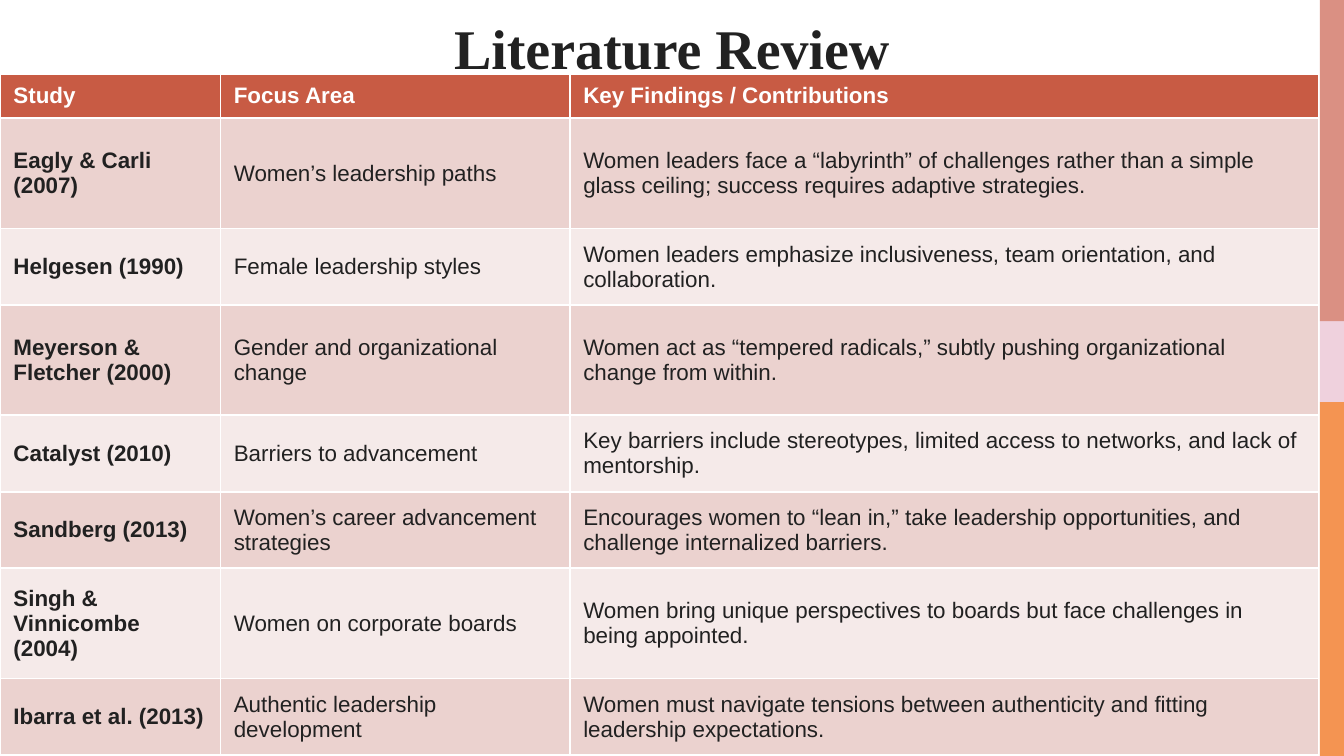
import pptx
import pptx.dml.color
import pptx.enum.shapes
import pptx.enum.text
import pptx.util
from typing import NamedTuple

Inches = pptx.util.Inches
Align = pptx.enum.text.PP_ALIGN
Anchor = pptx.enum.text.MSO_ANCHOR

DARK, WHITE, HEAD = "212121", "FFFFFF", "C85B44"
BANDS = ("EBD2CF", "F5EAE9")
WIDTHS = (1.64, 2.6, 5.57)
SHORT, TALL = 0.57, 0.82
WIDE = 10
BASE = WIDE * 9 / 16
EDGE = 9.82


class Strip(NamedTuple):
    top: float
    end: float
    color: str


class Study(NamedTuple):
    name: str
    focus: str
    finding: str
    height: float = SHORT


STRIPS = (
    Strip(2.99, BASE, "F49452"),
    Strip(2.39, 2.99, "EFD1DD"),
    Strip(0, 2.39, "DA9083"),
)

ROWS = (
    Study("Study", "Focus Area", "Key Findings / Contributions", 0.33),
    Study("Eagly & Carli (2007)", "Women’s leadership paths",
          "Women leaders face a “labyrinth” of challenges rather than a simple "
          "glass ceiling; success requires adaptive strategies.", TALL),
    Study("Helgesen (1990)", "Female leadership styles",
          "Women leaders emphasize inclusiveness, team orientation, and collaboration."),
    Study("Meyerson & Fletcher (2000)", "Gender and organizational change",
          "Women act as “tempered radicals,” subtly pushing organizational "
          "change from within.", TALL),
    Study("Catalyst (2010)", "Barriers to advancement",
          "Key barriers include stereotypes, limited access to networks, and "
          "lack of mentorship."),
    Study("Sandberg (2013)", "Women’s career advancement strategies",
          "Encourages women to “lean in,” take leadership opportunities, and "
          "challenge internalized barriers."),
    Study("Singh & Vinnicombe (2004)", "Women on corporate boards",
          "Women bring unique perspectives to boards but face challenges in "
          "being appointed.", TALL),
    Study("Ibarra et al. (2013)", "Authentic leadership development",
          "Women must navigate tensions between authenticity and fitting "
          "leadership expectations."),
)


def tint(form, color: str) -> None:
    if hasattr(form, "solid"):
        form.solid()
        form = form.fore_color
    form.rgb = pptx.dml.color.RGBColor.from_string(color)


def apply(item, form: dict) -> None:
    for key, value in form.items():
        setattr(item, key, value)


def write(frame, text: str, color: str, font: dict) -> None:
    frame.text = text
    run = frame.paragraphs[0].runs[0]
    apply(run.font, font)
    tint(run.font.color, color)


def draw_title(slide) -> None:
    title = slide.shapes.title
    apply(title, {"left": Inches(0.79), "top": 0,
                  "width": Inches(8.42), "height": Inches(0.63)})
    frame = title.text_frame
    write(frame, "Literature Review", DARK,
          {"name": "Times New Roman", "size": pptx.util.Pt(30), "bold": True})
    sides = ("left", "top", "right", "bottom")
    apply(frame, {f"margin_{side}": Inches(0.1) for side in sides})
    apply(frame, {"vertical_anchor": Anchor.TOP, "word_wrap": True,
                  "auto_size": pptx.enum.text.MSO_AUTO_SIZE.NONE})
    frame.paragraphs[0].alignment = Align.CENTER


def draw_strip(slide, strip: Strip) -> None:
    box = slide.shapes.add_shape(
        pptx.enum.shapes.MSO_SHAPE.RECTANGLE, Inches(EDGE), Inches(strip.top),
        Inches(WIDE - EDGE), Inches(strip.end - strip.top))
    box.shadow.inherit = False
    tint(box.fill, strip.color)
    box.line.fill.background()


def draw_table(slide) -> None:
    table = slide.shapes.add_table(
        len(ROWS), len(WIDTHS), 0, Inches(0.55), Inches(sum(WIDTHS)),
        Inches(sum(row.height for row in ROWS))).table
    for column, width in zip(table.columns, WIDTHS):
        column.width = Inches(width)
    for y, study in enumerate(ROWS):
        table.rows[y].height = Inches(study.height)
        fill = BANDS[(y - 1) % 2] if y else HEAD
        for x, text in enumerate((study.name, study.focus, study.finding)):
            cell = table.cell(y, x)
            cell.vertical_anchor = Anchor.MIDDLE
            tint(cell.fill, fill)
            write(cell.text_frame, text, DARK if y else WHITE,
                  {"name": "Arial", "size": pptx.util.Pt(12),
                   "bold": y == 0 or x == 0})


def main() -> None:
    deck = pptx.Presentation()
    apply(deck, {"slide_width": Inches(WIDE), "slide_height": Inches(BASE)})
    slide = deck.slides.add_slide(deck.slide_layouts[5])
    for strip in STRIPS:
        draw_strip(slide, strip)
    draw_title(slide)
    draw_table(slide)
    deck.save("out.pptx")


if __name__ == "__main__":
    main()
